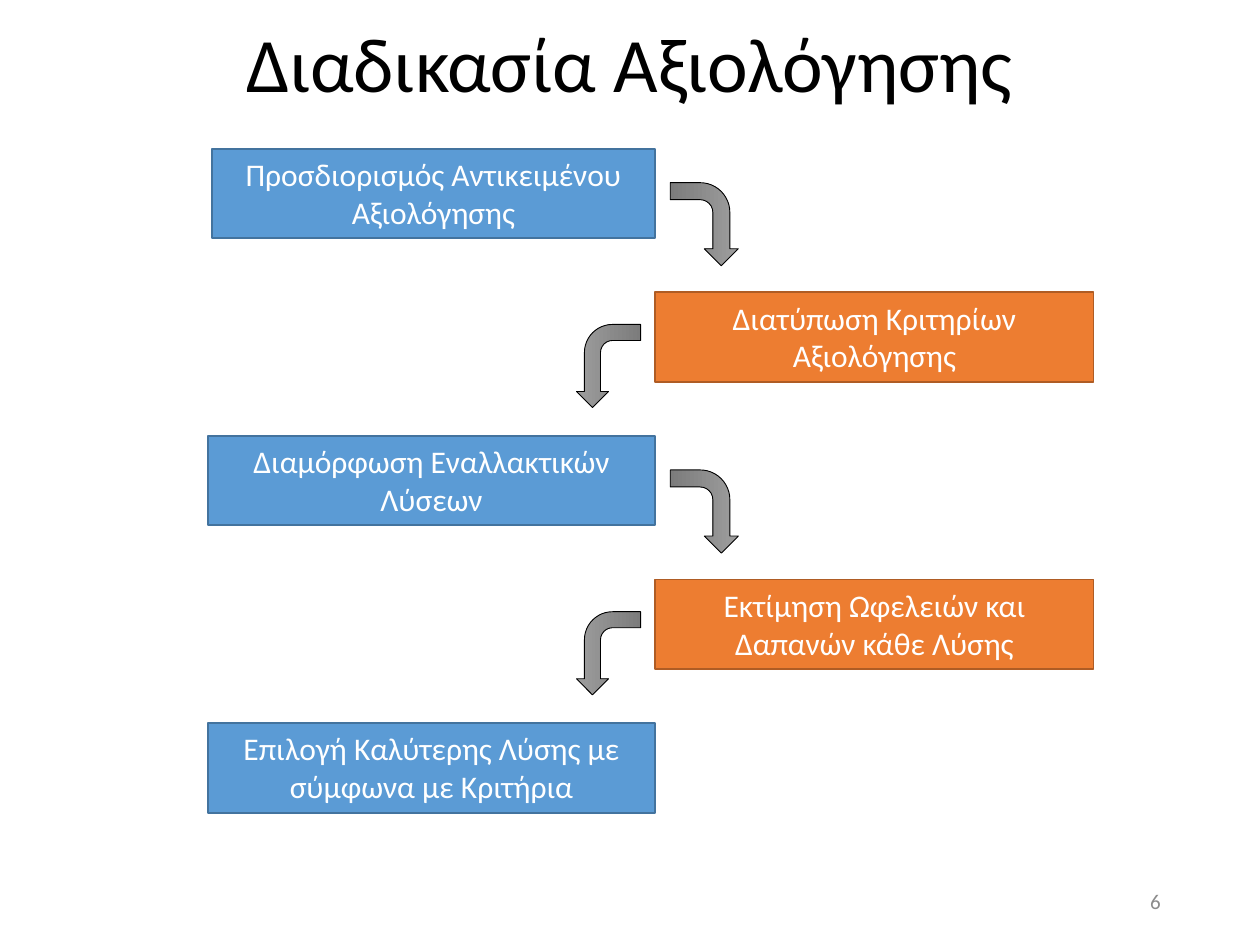
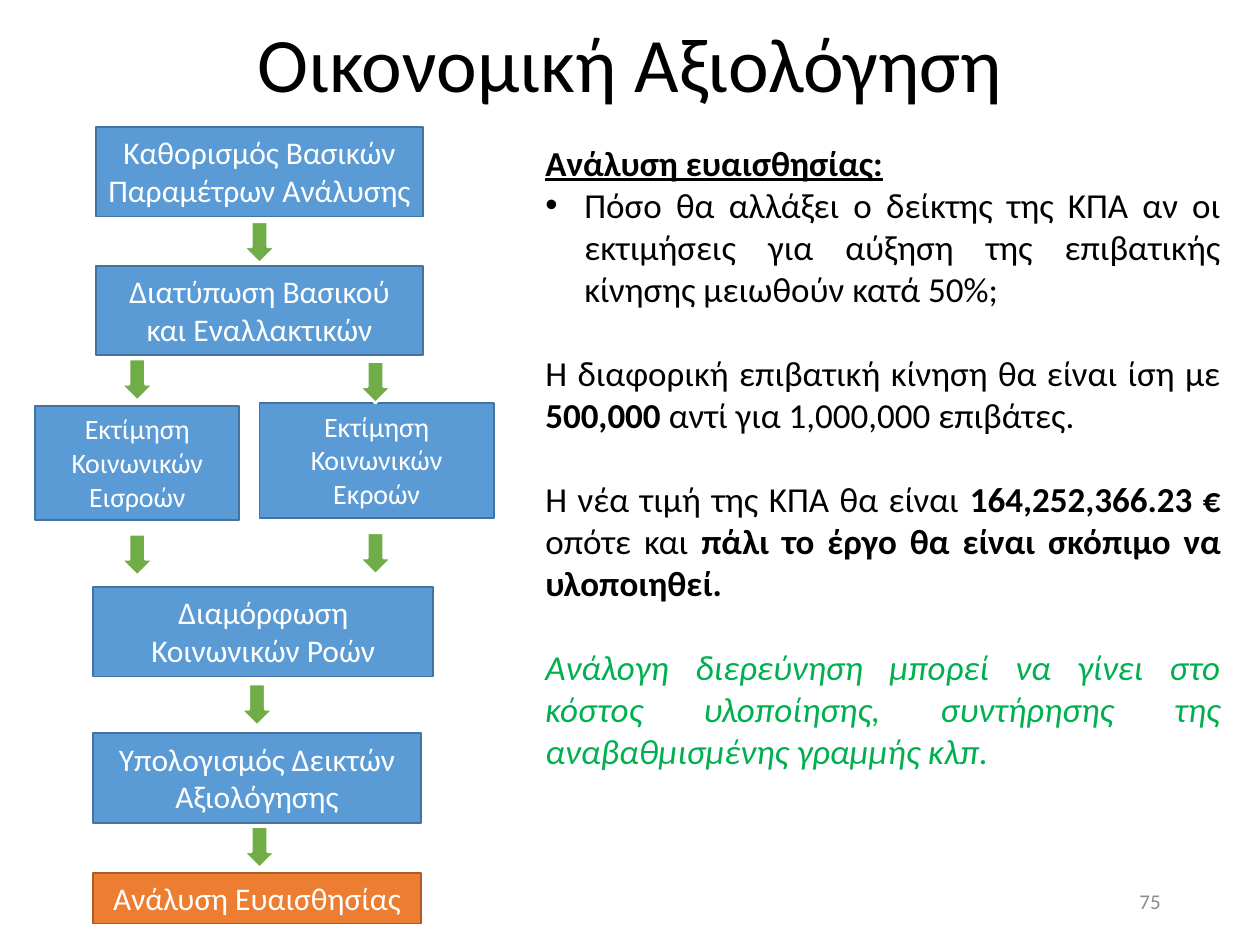
from typing import NamedTuple

from lxml.etree import SubElement
from pptx import Presentation
from pptx.dml.color import RGBColor
from pptx.enum.shapes import MSO_SHAPE
from pptx.enum.text import MSO_ANCHOR, PP_ALIGN
from pptx.oxml.ns import qn
from pptx.util import Inches, Pt

WIDTH, HEIGHT = Inches(10), Inches(7.5)
COLUMN, ROW = WIDTH / 100, HEIGHT / 75
FONT = "Calibri"

BLACK = RGBColor(0x00, 0x00, 0x00)
WHITE = RGBColor(0xFF, 0xFF, 0xFF)
GREY = RGBColor(0x8C, 0x8C, 0x8C)
BLUE = RGBColor(0x5B, 0x9B, 0xD5)
BLUE_EDGE = RGBColor(0x43, 0x73, 0x9E)
ORANGE = RGBColor(0xED, 0x7D, 0x31)
ORANGE_EDGE = RGBColor(0xAF, 0x5C, 0x24)
ARROW_GREEN = RGBColor(0x70, 0xAD, 0x47)
TEXT_GREEN = RGBColor(0x00, 0xB0, 0x50)
ARROW_LIGHT = RGBColor(0x9D, 0x9D, 0x9D)
ARROW_DARK = RGBColor(0x7C, 0x7C, 0x7C)


class Box(NamedTuple):
    left: float
    top: float
    width: float
    height: float

    def inside(self, left, top, width, height):
        return Box(self.left + left, self.top + top, width, height)

    def lengths(self):
        return (round(self.left * COLUMN), round(self.top * ROW),
                round(self.width * COLUMN), round(self.height * ROW))


PAGE = Box(0, 0, 100, 75)


def write(para, text, size=18, color=BLACK, bold=False, italic=False, underline=False):
    span = para.add_run()
    span.text = text
    font = span.font
    font.name, font.size, font.color.rgb = FONT, Pt(size), color
    font.bold, font.italic, font.underline = bold, italic, underline


def add_text(page, box, text, align, anchor=MSO_ANCHOR.MIDDLE, spacing=None, **style):
    frame = page.shapes.add_textbox(*box.lengths()).text_frame
    frame.word_wrap = True
    frame.vertical_anchor = anchor
    para = frame.paragraphs[0]
    para.alignment = align
    para.line_spacing = spacing
    write(para, text, **style)
    return frame


def add_shape(page, box, kind, edge, edge_width, fill=None):
    shape = page.shapes.add_shape(kind, *box.lengths())
    shape.shadow.inherit = False
    shape.line.color.rgb = edge
    shape.line.width = Pt(edge_width)
    if fill is not None:
        shape.fill.solid()
        shape.fill.fore_color.rgb = fill
    return shape


def add_step(page, box, text, size=18, accent=False):
    fill, edge = (ORANGE, ORANGE_EDGE) if accent else (BLUE, BLUE_EDGE)
    frame = add_shape(page, box, MSO_SHAPE.RECTANGLE, edge, 1, fill).text_frame
    frame.word_wrap = True
    frame.vertical_anchor = MSO_ANCHOR.TOP
    frame.paragraphs[0].alignment = PP_ALIGN.CENTER
    write(frame.paragraphs[0], text, size=size, color=WHITE)


def add_bent_arrow(page, box, flipped):
    arrow = add_shape(page, box, MSO_SHAPE.BENT_ARROW, BLACK, 0.5)
    arrow.fill.gradient()
    arrow.fill.gradient_angle = 270
    for stop, color in zip(arrow.fill.gradient_stops, (ARROW_LIGHT, ARROW_DARK)):
        stop.color.rgb = color
    arrow.rotation = 90
    if flipped:
        arrow._element.spPr.find(qn("a:xfrm")).set("flipV", "1")


def add_bullet(para, indent):
    properties = para._p.get_or_add_pPr()
    properties.set("marL", str(indent))
    properties.set("indent", str(-indent))
    SubElement(properties, qn("a:buFont"), typeface="Arial")
    SubElement(properties, qn("a:buChar"), char="•")


def add_page(deck, title, number):
    page = deck.slides.add_slide(deck.slide_layouts[6])
    add_text(page, PAGE.inside(0, 0, 100, 10.7), title, PP_ALIGN.CENTER, spacing=0.9, size=44)
    add_text(page, PAGE.inside(70.6, 69.5, 22.5, 4), number, PP_ALIGN.RIGHT, size=12, color=GREY)
    return page


def draw_zigzag(page, box, steps):
    pitch, height, middle = 11.4, 7.1, 35.5
    for index, text in enumerate(steps):
        on_right = index % 2 == 1
        left, width = (middle, 34.8) if on_right else (0, middle)
        if index == 0:
            left, width = 0.3, middle - 0.3
        add_step(page, box.inside(left, index * pitch, width, height), text, accent=on_right)
    for index in range(len(steps) - 1):
        on_right = index % 2 == 1
        left, thickness = (middle - 7, 5.1) if on_right else (middle + 0.6, 5.4)
        add_bent_arrow(page, box.inside(left, index * pitch + 3.3, 6.6, thickness), on_right)


def draw_sequence(page, box):
    steps = [
        ("Καθορισμός Βασικών Παραμέτρων Ανάλυσης", 4.8, 0, 26, 7.1),
        ("Διατύπωση Βασικού και Εναλλακτικών", 4.8, 11, 26, 7.1),
        ("Διαμόρφωση Κοινωνικών Ροών", 4.6, 36.5, 27, 7.1),
        ("Υπολογισμός Δεικτών Αξιολόγησης", 4.6, 48.1, 26, 7.1),
    ]
    branches = [
        ("Εκτίμηση Κοινωνικών Εισροών", 0, 22.1, 16.2, 9.1),
        ("Εκτίμηση Κοινωνικών Εκροών", 17.8, 21.9, 18.6, 9.1),
    ]
    for text, *place in steps:
        add_step(page, box.inside(*place), text)
    for text, *place in branches:
        add_step(page, box.inside(*place), text, size=16)
    add_step(page, box.inside(4.6, 59.2, 26, 4), "Ανάλυση Ευαισθησίας", accent=True)

    trunk, input_branch, output_branch = 16.5, 6.8, 25.7
    arrows = [(trunk, 7.5), (input_branch, 18.4), (output_branch, 18.6), (input_branch, 32.3),
              (output_branch, 32.2), (trunk - 0.2, 44.2), (trunk, 55.5)]
    for left, top in arrows:
        add_shape(page, box.inside(left, top, 2.6, 3.3), MSO_SHAPE.DOWN_ARROW,
                  WHITE, 1.5, ARROW_GREEN)


def draw_analysis(page, box):
    strong = {"bold": True}
    frame = add_text(page, box, "Ανάλυση ευαισθησίας:", PP_ALIGN.JUSTIFY,
                     anchor=MSO_ANCHOR.TOP, size=20, bold=True, underline=True)
    question = [("Πόσο θα αλλάξει ο δείκτης της ΚΠΑ αν οι εκτιμήσεις για αύξηση της "
                 "επιβατικής κίνησης μειωθούν κατά 50%;", {})]
    findings = [
        [("Η διαφορική επιβατική κίνηση θα είναι ίση με ", {}),
         ("500,000", strong),
         (" αντί για 1,000,000 επιβάτες.", {})],
        [("Η νέα τιμή της ΚΠΑ θα είναι ", {}),
         ("164,252,366.23 € ", strong),
         ("οπότε και ", {}),
         ("πάλι το έργο θα είναι σκόπιμο να υλοποιηθεί.", strong)],
        [("Ανάλογη διερεύνηση μπορεί να γίνει στο κόστος υλοποίησης, συντήρησης της "
          "αναβαθμισμένης γραμμής κλπ.", {"color": TEXT_GREEN, "italic": True})],
    ]
    for spans in [question, *findings]:
        para = frame.add_paragraph()
        para.alignment = PP_ALIGN.JUSTIFY
        if spans is question:
            add_bullet(para, Inches(0.31))
        else:
            para.space_before = Pt(24)
        for text, style in spans:
            write(para, text, size=20, **style)


def main():
    deck = Presentation()
    deck.slide_width, deck.slide_height = WIDTH, HEIGHT

    process = add_page(deck, "Διαδικασία Αξιολόγησης", "6")
    draw_zigzag(process, PAGE.inside(16.5, 11.8, 70.3, 52.7), [
        "Προσδιορισμός Αντικειμένου Αξιολόγησης",
        "Διατύπωση Κριτηρίων Αξιολόγησης",
        "Διαμόρφωση Εναλλακτικών Λύσεων",
        "Εκτίμηση Ωφελειών και Δαπανών κάθε Λύσης",
        "Επιλογή Καλύτερης Λύσης με σύμφωνα με Κριτήρια",
    ])

    economics = add_page(deck, "Οικονομική Αξιολόγηση", "75")
    draw_sequence(economics, PAGE.inside(2.8, 10.1, 36.4, 63.2))
    draw_analysis(economics, PAGE.inside(42.3, 10.7, 55.6, 51.5))

    deck.save("out.pptx")


if __name__ == "__main__":
    main()
